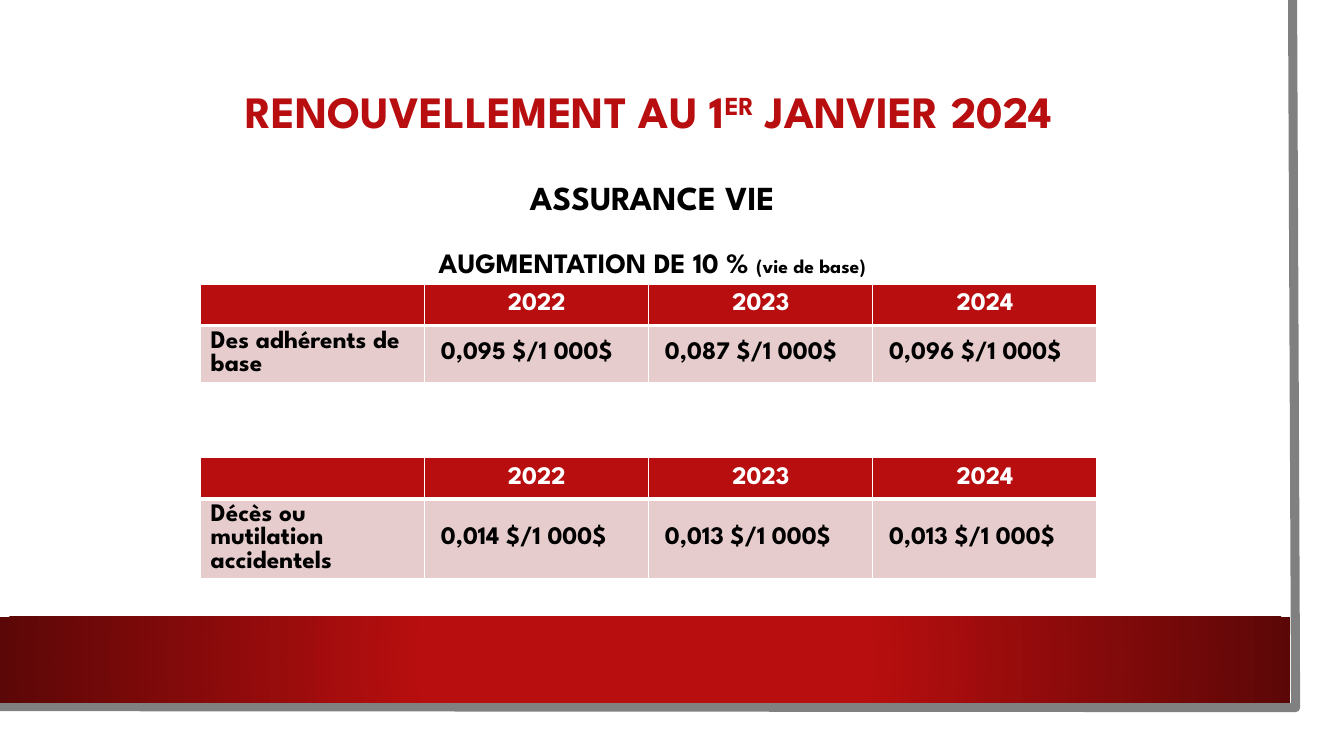
from lxml import etree
from pptx import Presentation
from pptx.dml.color import RGBColor
from pptx.enum.shapes import MSO_SHAPE
from pptx.enum.text import MSO_ANCHOR, MSO_AUTO_SIZE, PP_ALIGN
from pptx.oxml import parse_xml
from pptx.util import Inches, Pt

RECTANGLE = MSO_SHAPE.RECTANGLE
TOP, MIDDLE = MSO_ANCHOR.TOP, MSO_ANCHOR.MIDDLE
CENTER, LEFT = PP_ALIGN.CENTER, PP_ALIGN.LEFT
NO_AUTOFIT = MSO_AUTO_SIZE.NONE

FONT = "League Spartan"
RED, DARK_RED, PINK = "B80E0F", "5C0707", "E6CCCC"
BLACK, WHITE, GRAY = "000000", "FFFFFF", "808080"
NAMESPACE = "http://schemas.openxmlformats.org/drawingml/2006/main"


def color(hex_string):
    return RGBColor.from_string(hex_string)


def add_run(paragraph, text, size, font_color):
    run = paragraph.add_run()
    run.text = text
    run.font.name = FONT
    run.font.size = Pt(size)
    run.font.bold = True
    run.font.color.rgb = color(font_color)
    return run


presentation = Presentation()
presentation.slide_width = Inches(13.33)
presentation.slide_height = Inches(7.5)
slide = presentation.slides.add_slide(presentation.slide_layouts[1])
shapes = slide.shapes

# White sheet
sheet = shapes.add_shape(RECTANGLE, 0, 0, Inches(13.1), Inches(7.27))
sheet.shadow.inherit = False
sheet.fill.solid()
sheet.fill.fore_color.rgb = color(WHITE)
sheet.line.fill.background()

# Gray edge on the right and at the bottom
builder = shapes.build_freeform(Inches(12.82), 0)
builder.add_line_segments(
    [(Inches(12.85), Inches(7.02)), (Inches(-0.03), Inches(7.01))], close=False)
edge = builder.convert_to_shape()
edge.shadow.inherit = False
edge.fill.background()
edge.line.color.rgb = color(GRAY)
edge.line.width = Pt(6.5)

# Red band with a radial gradient
band = shapes.add_shape(RECTANGLE, 0, Inches(6.12), Inches(12.8), Inches(0.85))
band.shadow.inherit = False
band.line.fill.background()
gradient = parse_xml(
    f'<a:gradFill xmlns:a="{NAMESPACE}" rotWithShape="1"><a:gsLst>'
    f'<a:gs pos="34000"><a:srgbClr val="{RED}"/></a:gs>'
    f'<a:gs pos="100000"><a:srgbClr val="{DARK_RED}"/></a:gs></a:gsLst>'
    '<a:path path="circle"><a:fillToRect l="50000" t="50000" r="50000" b="50000"/></a:path>'
    '</a:gradFill>')
band.element.spPr.find(f"{{{NAMESPACE}}}prstGeom").addnext(gradient)

# Title and body placeholders, brought in front of the background
title, body = shapes.title, slide.placeholders[1]
for placeholder, top, inset in ((title, 0.75, 0.14), (body, 1.49, 0.18)):
    shapes.element.append(placeholder.element)
    placeholder.left, placeholder.top = Inches(0.75), Inches(top)
    placeholder.width, placeholder.height = Inches(11.37), Inches(1.26)
    frame = placeholder.text_frame
    frame.word_wrap = True
    frame.auto_size = NO_AUTOFIT
    frame.vertical_anchor = TOP
    frame.margin_top = Inches(inset)

paragraph = title.text_frame.paragraphs[0]
paragraph.alignment = CENTER
paragraph.line_spacing = 0.9
add_run(paragraph, "RENOUVELLEMENT AU 1", 32, RED)
superscript = add_run(paragraph, "ER", 32, RED)
superscript.font._element.set("baseline", "30000")
add_run(paragraph, " JANVIER 2024", 32, RED)

body_lines = [
    [("ASSURANCE VIE", 24)],
    [("AUGMENTATION DE 10 % ", 20), ("(vie de base)", 14)],
]
for index, line in enumerate(body_lines):
    paragraph = body.text_frame.add_paragraph() if index else body.text_frame.paragraphs[0]
    properties = paragraph._p.get_or_add_pPr()
    properties.set("marL", str(Inches(0.07)))
    properties.set("indent", "0")
    etree.SubElement(properties, f"{{{NAMESPACE}}}buNone")
    paragraph.alignment = CENTER
    paragraph.line_spacing = 1.2
    paragraph.space_before = Pt(10 if index else 0)
    paragraph.space_after = Pt(0 if index else 6)
    for text, size in line:
        add_run(paragraph, text, size, BLACK)

# Rate tables
years = ["", "2022", "2023", "2024"]
rate_tables = [
    (2.82, ["Des adhérents de base", "0,095 $/1 000$", "0,087 $/1 000$", "0,096 $/1 000$"]),
    (4.54, ["Décès ou mutilation accidentels", "0,014 $/1 000$", "0,013 $/1 000$",
            "0,013 $/1 000$"]),
]
for top, rates in rate_tables:
    table = shapes.add_table(
        2, 4, Inches(1.99), Inches(top), Inches(8.89), Inches(0.82)).table
    for row_index, texts in enumerate((years, rates)):
        is_header = row_index == 0
        table.rows[row_index].height = Inches(0.41)
        for column_index, text in enumerate(texts):
            cell = table.cell(row_index, column_index)
            cell.vertical_anchor = MIDDLE
            cell.fill.solid()
            cell.fill.fore_color.rgb = color(RED if is_header else PINK)
            if not is_header and column_index:
                cell.margin_left = Inches(0.16)
            paragraph = cell.text_frame.paragraphs[0]
            paragraph.alignment = CENTER if is_header else LEFT
            if text:
                add_run(paragraph, text, 18, WHITE if is_header else BLACK)
            else:
                paragraph.font.size = Pt(18)

            # White borders, thicker between header and rates
            thick_side = "lnB" if is_header else "lnT"
            for position, side in enumerate(("lnL", "lnR", "lnT", "lnB")):
                width = Pt(3 if side == thick_side else 1)
                border = parse_xml(
                    f'<a:{side} xmlns:a="{NAMESPACE}" w="{width}"><a:solidFill>'
                    f'<a:srgbClr val="{WHITE}"/></a:solidFill></a:{side}>')
                cell._tc.get_or_add_tcPr().insert(position, border)

presentation.save("out.pptx")
